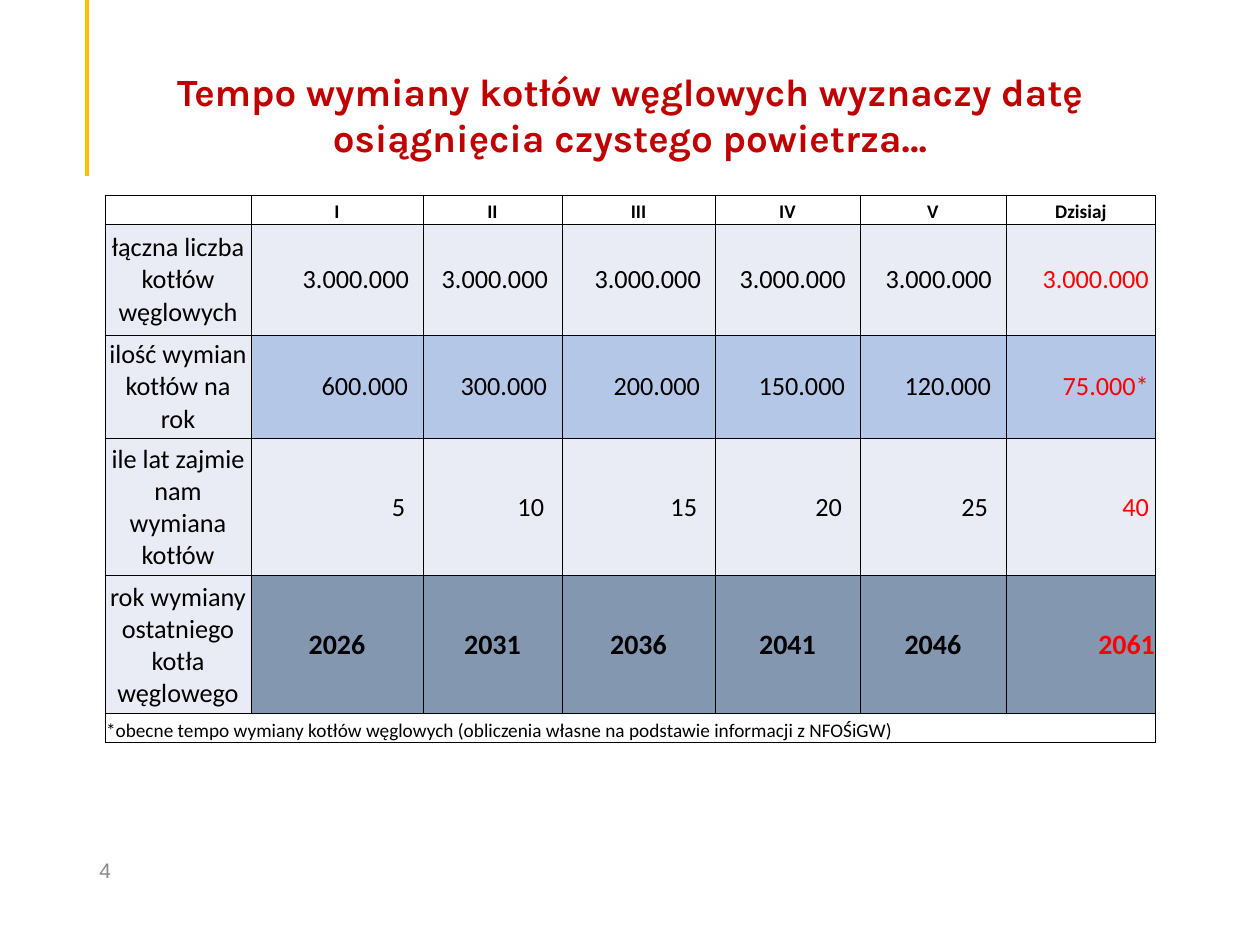
from lxml.etree import SubElement
from pptx import Presentation
from pptx.dml.color import RGBColor
from pptx.enum.shapes import MSO_CONNECTOR
from pptx.enum.text import MSO_ANCHOR, MSO_AUTO_SIZE, PP_ALIGN
from pptx.oxml import parse_xml
from pptx.oxml.ns import nsdecls, qn
from pptx.util import Inches, Pt

PX = Inches(1) // 126
BLACK = RGBColor(0x00, 0x00, 0x00)
RED = RGBColor(0xFF, 0x00, 0x00)
DARK_RED = RGBColor(0xC0, 0x00, 0x00)
GOLD = RGBColor(0xFF, 0xC0, 0x00)
GRAY = RGBColor(0x89, 0x89, 0x89)
PALE = RGBColor(0xE9, 0xEB, 0xF5)
BLUE = RGBColor(0xB4, 0xC7, 0xE7)
SLATE = RGBColor(0x84, 0x97, 0xB0)


def write_text(text_frame, text, size=11, font="Calibri", color=BLACK, bold=False, align=PP_ALIGN.LEFT):
    paragraph = text_frame.paragraphs[0]
    paragraph.alignment = align
    if not text:
        SubElement(paragraph._p, qn("a:endParaRPr"), sz=str(size * 100))
        return
    run = paragraph.add_run()
    run.text = text
    run.font.size = Pt(size)
    run.font.name = font
    run.font.bold = bold
    run.font.color.rgb = color


def format_cell(cell, fill, anchor, right_margin):
    cell.margin_left = cell.margin_top = PX
    cell.margin_right = right_margin * PX
    cell.margin_bottom = 0
    cell.vertical_anchor = anchor
    properties = cell._tc.get_or_add_tcPr()
    for side in ("lnL", "lnR", "lnT", "lnB"):
        properties.append(parse_xml(
            f'<a:{side} {nsdecls("a")} w="6350"><a:solidFill>'
            f'<a:srgbClr val="{BLACK}"/></a:solidFill></a:{side}>'))
    if fill is None:
        cell.fill.background()
    else:
        cell.fill.solid()
        cell.fill.fore_color.rgb = fill


presentation = Presentation()
presentation.slide_width = 1260 * PX
presentation.slide_height = 945 * PX
slide = presentation.slides.add_slide(presentation.slide_layouts[5])

accent_line = slide.shapes.add_connector(MSO_CONNECTOR.STRAIGHT, 87 * PX, 0, 87 * PX, 176 * PX)
accent_line.line.color.rgb = GOLD
accent_line.line.width = Pt(2.25)
SubElement(accent_line._element.spPr, qn("a:effectLst"))

title = slide.shapes.title
title.left, title.top, title.width, title.height = 89 * PX, 62 * PX, 1082 * PX, 106 * PX
title.text_frame.auto_size = MSO_AUTO_SIZE.NONE
title.text_frame.vertical_anchor = MSO_ANCHOR.TOP
write_text(title.text_frame, "Tempo wymiany kotłów węglowych wyznaczy datę osiągnięcia czystego powietrza…",
           size=22, font="Karla", color=DARK_RED, bold=True, align=PP_ALIGN.CENTER)

number_box = slide.shapes.add_textbox(87 * PX, 845 * PX, 284 * PX, 50 * PX)
number_box.text_frame.word_wrap = True
number_box.text_frame.vertical_anchor = MSO_ANCHOR.MIDDLE
write_text(number_box.text_frame, "4", size=12, font="Arial", color=GRAY)

column_widths = [146, 172, 139, 153, 145, 146, 150]
row_heights = [29, 111, 103, 138, 138, 29]
table = slide.shapes.add_table(len(row_heights), len(column_widths), 105 * PX, 195 * PX,
                               sum(column_widths) * PX, sum(row_heights) * PX).table
table.first_row = False
table.horz_banding = False
for column, width in zip(table.columns, column_widths):
    column.width = width * PX
for row, height in zip(table.rows, row_heights):
    row.height = height * PX

headers = ["", "I", "II", "III", "IV", "V", "Dzisiaj"]
for column, header in enumerate(headers):
    cell = table.cell(0, column)
    format_cell(cell, None, MSO_ANCHOR.BOTTOM, 1)
    write_text(cell.text_frame, header, bold=True, align=PP_ALIGN.CENTER)

number_rows = [
    (PALE, 14, ["łączna liczba kotłów węglowych"] + ["3.000.000"] * 6),
    (BLUE, 15, ["ilość wymian kotłów na rok", "600.000", "300.000", "200.000", "150.000", "120.000", "75.000*"]),
    (PALE, 18, ["ile lat zajmie nam wymiana kotłów", "5", "10", "15", "20", "25", "40"]),
    (SLATE, 1, ["rok wymiany ostatniego kotła węglowego", "2026", "2031", "2036", "2041", "2046", "2061"]),
]
for row, (fill, right_margin, values) in enumerate(number_rows, 1):
    is_year = fill == SLATE
    for column, value in enumerate(values):
        is_label = column == 0
        is_today = column == len(values) - 1
        centered = is_label or (is_year and not is_today)
        margin = 1 if is_label or is_year else 7 if is_today else right_margin
        cell = table.cell(row, column)
        format_cell(cell, PALE if is_label else fill, MSO_ANCHOR.MIDDLE, margin)
        write_text(cell.text_frame, value, size=16 if is_year and not is_label else 15,
                   color=RED if is_today else BLACK, bold=is_year and not is_label,
                   align=PP_ALIGN.CENTER if centered else PP_ALIGN.RIGHT)

footnote = "*obecne tempo wymiany kotłów węglowych (obliczenia własne na podstawie informacji z NFOŚiGW)"
table.cell(5, 0).merge(table.cell(5, 6))
for column in range(len(column_widths)):
    cell = table.cell(5, column)
    format_cell(cell, None, MSO_ANCHOR.BOTTOM, 1)
    write_text(cell.text_frame, "" if column else footnote)

presentation.save("out.pptx")
